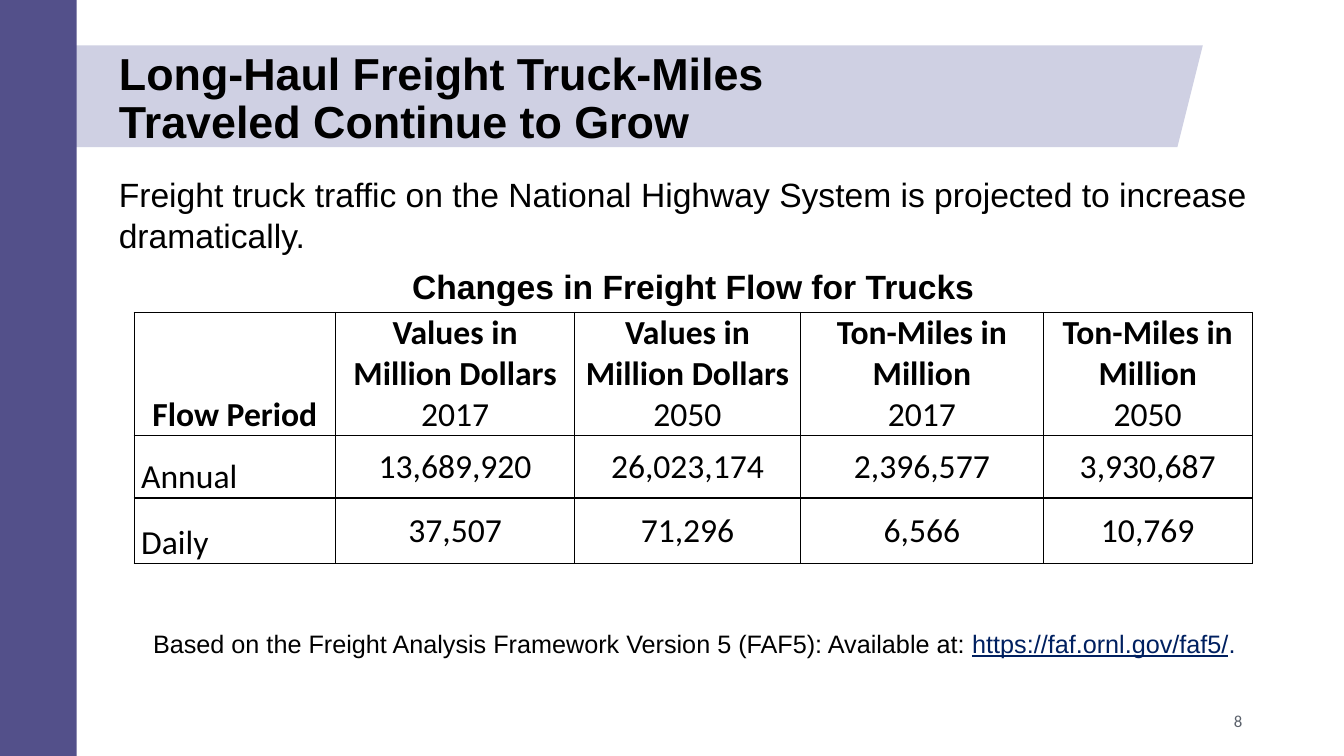
import dataclasses
import typing

import lxml.etree
import pptx
import pptx.dml.color
import pptx.enum.shapes
import pptx.enum.text
import pptx.oxml.ns
import pptx.util

ALIGN = pptx.enum.text.PP_ALIGN
ANCHOR = pptx.enum.text.MSO_ANCHOR
SHAPE = pptx.enum.shapes.MSO_SHAPE
WIDTH = pptx.util.Inches(13.33)
HEIGHT = pptx.util.Inches(7.5)


class Box(typing.NamedTuple):
    """Left, top, width and height in percent of the slide's size."""
    left: float
    top: float
    width: float
    height: float


@dataclasses.dataclass
class Run:
    text: str
    size: float = 24
    font: str = "Arial"
    color: str = "000000"
    bold: bool = False
    underline: bool = False


@dataclasses.dataclass
class Panel:
    shape: SHAPE
    box: Box
    color: str


@dataclasses.dataclass
class Label:
    box: Box
    runs: list[Run]
    align: ALIGN = ALIGN.LEFT
    anchor: ANCHOR = ANCHOR.TOP


PANELS = [
    Panel(SHAPE.PARALLELOGRAM, Box(1.8, 6, 87.7, 13.47), "CFD0E3"),
    Panel(SHAPE.RECTANGLE, Box(0, 0, 5.7, 100), "53508A"),
]
TITLE_BOX = Box(8.1, 6.13, 73.82, 7.33)
TITLE_LINES = ["Long-Haul Freight Truck-Miles ", "Traveled Continue to Grow"]
LABELS = [
    Label(Box(8.1, 22.4, 89.27, 12.13),
          [Run("Freight truck traffic on the National Highway System "
               "is projected to increase dramatically.")]),
    Label(Box(29.93, 34.53, 44.49, 6.67),
          [Run("Changes in Freight Flow for Trucks", bold=True)]),
    Label(Box(10.65, 82.4, 83.12, 5.33),
          [Run("Based on the Freight Analysis Framework Version 5 (FAF5): "
               "Available at: ", 18),
           Run("https://faf.ornl.gov/faf5/", 18, color="002060", underline=True),
           Run(".", 18, color="002060")]),
    Label(Box(70.67, 92.67, 22.51, 5.33),
          [Run("8", 12, "Calibri", "5B616B")], ALIGN.RIGHT, ANCHOR.MIDDLE),
]
TABLE_LEFT, TABLE_TOP = 9.98, 41.33
COLUMN_WIDTHS = [15, 17.78, 16.8, 18.08, 15.53]
ROW_HEIGHTS = [15.87, 8.27, 8.67]
HEADERS = [
    ["Flow Period"],
    ["Values in Million Dollars", "2017"],
    ["Values in Million Dollars", "2050"],
    ["Ton-Miles in Million", "2017"],
    ["Ton-Miles in Million", "2050"],
]
FLOWS = [
    ["Annual", "13,689,920", "26,023,174", "2,396,577", "3,930,687"],
    ["Daily", "37,507", "71,296", "6,566", "10,769"],
]


def across(share: float) -> int:
    return round(WIDTH * share / 100)


def down(share: float) -> int:
    return round(HEIGHT * share / 100)


def place(box: Box) -> tuple[int, int, int, int]:
    return across(box.left), down(box.top), across(box.width), down(box.height)


def rgb(color: str) -> pptx.dml.color.RGBColor:
    return pptx.dml.color.RGBColor.from_string(color)


def add_run(p, run: Run) -> None:
    r = p.add_run()
    r.text = run.text
    r.font.size = pptx.util.Pt(run.size)
    r.font.name = run.font
    r.font.bold = run.bold
    r.font.underline = run.underline
    r.font.color.rgb = rgb(run.color)


def add_panel(slide, panel: Panel) -> None:
    sp = slide.shapes.add_shape(panel.shape, *place(panel.box))
    sp.shadow.inherit = False
    sp.fill.solid()
    sp.fill.fore_color.rgb = rgb(panel.color)
    sp.line.fill.background()


def set_title(slide) -> None:
    sp = slide.shapes.title
    sp.left, sp.top, sp.width, sp.height = place(TITLE_BOX)
    # Bring the title in front of the band
    sp.element.getparent().append(sp.element)
    tf = sp.text_frame
    tf.word_wrap = True
    tf.auto_size = pptx.enum.text.MSO_AUTO_SIZE.NONE
    tf.vertical_anchor = ANCHOR.TOP
    p = tf.paragraphs[0]
    p.alignment = ALIGN.LEFT
    p.line_spacing = 0.9
    for i, line in enumerate(TITLE_LINES):
        if i:
            p.add_line_break()
        add_run(p, Run(line, 32, bold=True))


def add_label(slide, label: Label) -> None:
    tf = slide.shapes.add_textbox(*place(label.box)).text_frame
    tf.word_wrap = True
    tf.vertical_anchor = label.anchor
    p = tf.paragraphs[0]
    p.alignment = label.align
    for run in label.runs:
        add_run(p, run)


def add_borders(cell, color: str = "000000") -> None:
    qn = pptx.oxml.ns.qn
    props = cell._tc.get_or_add_tcPr()
    for side in ("a:lnL", "a:lnR", "a:lnT", "a:lnB"):
        ln = lxml.etree.SubElement(props, qn(side), w=str(pptx.util.Pt(1)))
        fill = lxml.etree.SubElement(ln, qn("a:solidFill"))
        lxml.etree.SubElement(fill, qn("a:srgbClr"), val=color)


def fill_cell(cell, lines: list[str], header: bool, first: bool) -> None:
    add_borders(cell)
    cell.fill.background()
    cell.margin_left = cell.margin_right = pptx.util.Inches(0.07)
    cell.margin_top = cell.margin_bottom = 0
    cell.vertical_anchor = ANCHOR.BOTTOM if header or first else ANCHOR.MIDDLE
    tf = cell.text_frame
    for i, line in enumerate(lines):
        p = tf.add_paragraph() if i else tf.paragraphs[0]
        p.alignment = ALIGN.LEFT if first and not header else ALIGN.CENTER
        add_run(p, Run(line, font="Calibri", bold=header and i == 0))


def add_flow_table(slide) -> None:
    box = Box(TABLE_LEFT, TABLE_TOP, sum(COLUMN_WIDTHS), sum(ROW_HEIGHTS))
    table = slide.shapes.add_table(
        len(ROW_HEIGHTS), len(COLUMN_WIDTHS), *place(box)).table
    table.first_row = table.horz_banding = False
    for column, width in zip(table.columns, COLUMN_WIDTHS):
        column.width = across(width)
    for row, height in zip(table.rows, ROW_HEIGHTS):
        row.height = down(height)
    rows = [HEADERS] + [[[value] for value in flow] for flow in FLOWS]
    for i, row in enumerate(rows):
        for j, lines in enumerate(row):
            fill_cell(table.cell(i, j), lines, header=i == 0, first=j == 0)
    # The last heading uses the full column width
    last = table.cell(0, len(COLUMN_WIDTHS) - 1)
    last.margin_left = last.margin_right = 0


def main() -> None:
    prs = pptx.Presentation()
    prs.slide_width, prs.slide_height = WIDTH, HEIGHT
    slide = prs.slides.add_slide(prs.slide_layouts.get_by_name("Title Only"))
    # Side bar and title band
    for panel in PANELS:
        add_panel(slide, panel)
    # Title, table and text
    set_title(slide)
    add_flow_table(slide)
    for label in LABELS:
        add_label(slide, label)
    prs.save("out.pptx")


if __name__ == "__main__":
    main()
